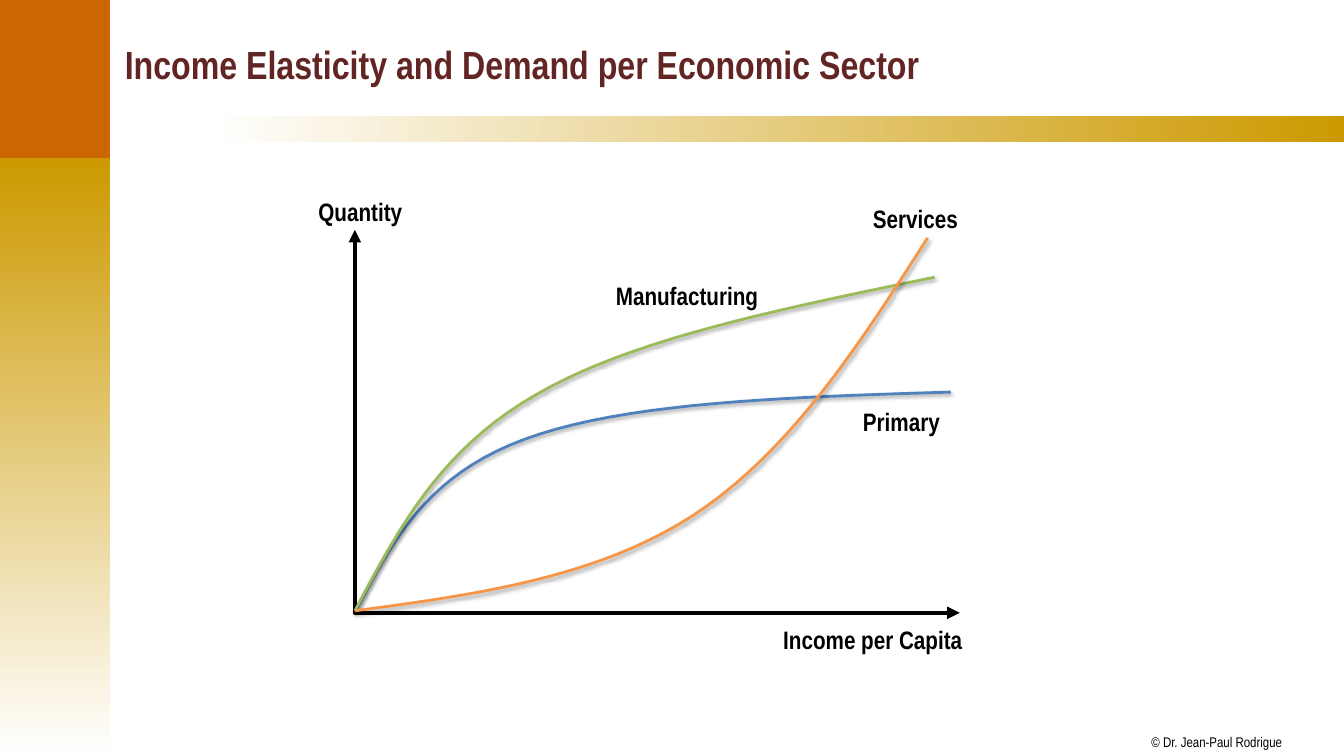
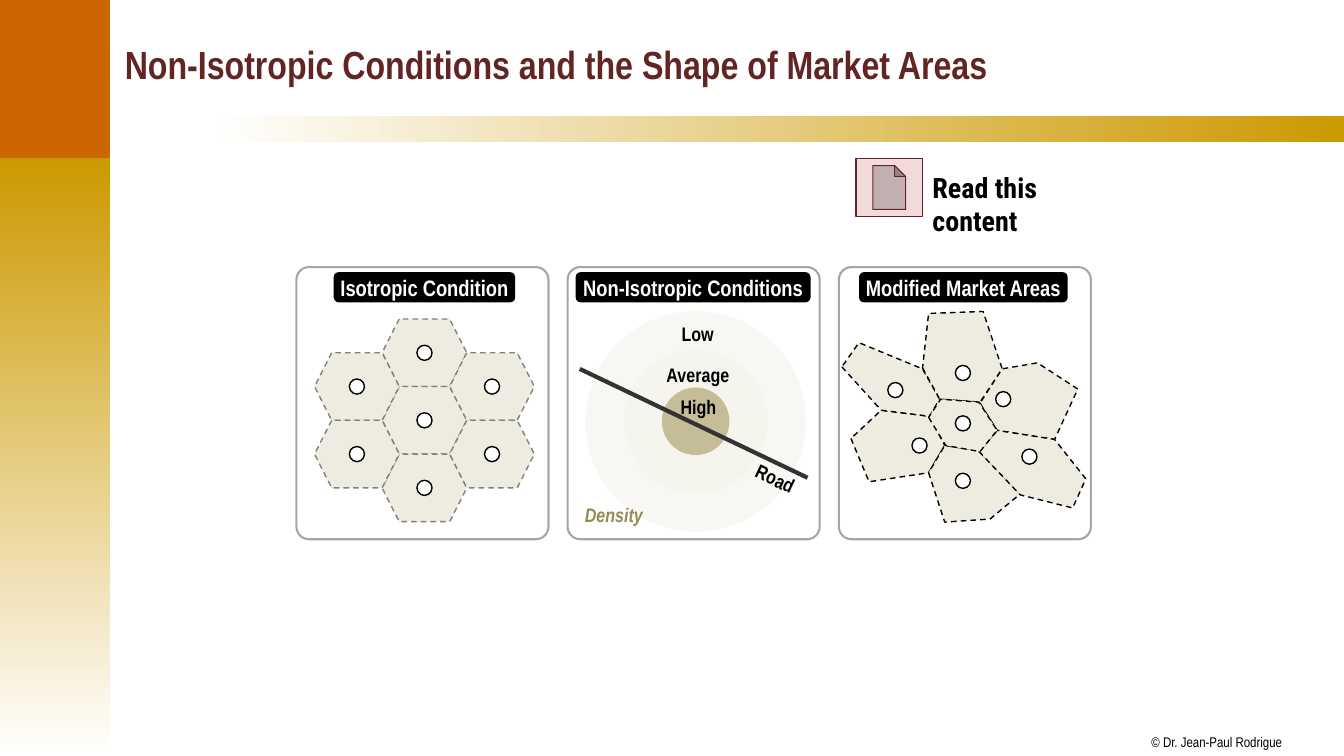
"""Build two economic geography slides: income elasticity and market areas."""
from dataclasses import dataclass
from typing import Optional

from lxml.etree import SubElement
from pptx import Presentation
from pptx.dml.color import RGBColor
from pptx.enum.dml import MSO_LINE_DASH_STYLE as Dash
from pptx.enum.shapes import MSO_CONNECTOR as Connector, MSO_SHAPE as Preset
from pptx.enum.text import MSO_ANCHOR as Anchor, PP_ALIGN as Align
from pptx.oxml.ns import qn
from pptx.util import Inches, Pt

Point = tuple[float, float]

BLACK = RGBColor(0x00, 0x00, 0x00)
WHITE = RGBColor(0xFF, 0xFF, 0xFF)
GOLD = RGBColor(0xCC, 0x99, 0x00)
ORANGE = RGBColor(0xCC, 0x66, 0x00)
MAROON = RGBColor(0x63, 0x25, 0x23)
PINK = RGBColor(0xF2, 0xDC, 0xDB)
BLUE = RGBColor(0x4F, 0x81, 0xBD)
GREEN = RGBColor(0x9B, 0xBB, 0x59)
APRICOT = RGBColor(0xF7, 0x96, 0x46)
CREAM = RGBColor(0xEE, 0xEC, 0xE1)
OLIVE = RGBColor(0x94, 0x8A, 0x54)
CHARCOAL = RGBColor(0x33, 0x33, 0x33)
GREY = RGBColor(0x80, 0x80, 0x80)
SILVER = RGBColor(0xA6, 0xA6, 0xA6)
LOW_TINT = RGBColor(0xF8, 0xF7, 0xF3)
AVERAGE_TINT = RGBColor(0xF5, 0xF4, 0xED)
HIGH_TINT = RGBColor(0xC4, 0xBD, 0x97)

NARROW = "Arial Narrow"
DOT_SIZE = 0.15
HEX_PITCH = 0.67
HEX_CENTRE = (4.21, 4.17)
DENSITY_CENTRE = (6.9, 4.18)
PANEL_LEFT, PANEL_STEP = 2.94, 2.69
CURVE_STEPS = 20


@dataclass(frozen=True)
class Label:
    """Text with its place and format."""
    text: str
    left: float
    top: float
    width: float
    height: float = 0.4
    size: float = 18
    color: RGBColor = BLACK
    font: str = NARROW
    bold: bool = True
    italic: bool = False
    inset: bool = True
    wrap: bool = False
    anchor: Anchor = Anchor.TOP
    rotation: float = 0


@dataclass(frozen=True)
class Curve:
    """Demand curve as a start and two cubic segments of three points each."""
    color: RGBColor
    points: tuple[Point, ...]


@dataclass(frozen=True)
class Panel:
    """Heading pill of one framed panel."""
    heading: str
    left: float
    width: float


CURVES = (
    Curve(BLUE, ((3.53, 6.06), (3.88, 5.39), (4.22, 4.72), (5.2, 4.36),
                 (6.19, 3.99), (7.81, 3.94), (9.43, 3.89))),
    Curve(GREEN, ((3.52, 6.06), (3.94, 5.27), (4.35, 4.47), (5.31, 3.92),
                  (6.26, 3.36), (7.77, 3.06), (9.27, 2.75))),
    Curve(APRICOT, ((3.52, 6.06), (4.73, 5.9), (5.93, 5.73), (6.88, 5.11),
                    (7.83, 4.49), (8.52, 3.43), (9.2, 2.36))),
)
CHART_LABELS = (
    Label("Quantity", 3.06, 1.9, 1.04),
    Label("Income per Capita", 7.67, 6.14, 2),
    Label("Primary", 8.46, 3.98, 0.98),
    Label("Manufacturing", 6.01, 2.73, 1.63),
    Label("Services", 8.56, 1.97, 1.06),
)
MARKET_AREAS = (
    ((8.44, 4.35), (8.62, 4.78), (9.21, 4.69), (9.37, 4.42), (9.22, 4.13), (8.74, 4.07)),
    ((9.21, 4.69), (9.37, 5.18), (9.82, 5.15), (10.12, 4.9), (9.71, 4.47), (9.37, 4.42)),
    ((8.35, 3.64), (8.74, 4.07), (9.22, 4.13), (9.32, 3.96), (9.15, 3.66), (8.52, 3.4)),
    ((9.15, 3.65), (9.32, 3.96), (9.72, 3.99), (9.94, 3.66), (9.75, 3.09), (9.21, 3.11)),
    ((9.72, 4), (9.89, 4.27), (10.46, 4.36), (10.69, 3.86), (10.29, 3.6), (9.94, 3.66)),
    ((9.71, 4.48), (10.12, 4.91), (10.64, 5.04), (10.77, 4.75), (10.46, 4.36), (9.89, 4.27)),
    ((9.21, 4.14), (9.38, 4.42), (9.72, 4.48), (9.89, 4.27), (9.71, 3.99), (9.33, 3.96)),
)
MARKET_CENTRES = ((9.55, 3.7), (9.55, 4.2), (8.88, 3.87), (9.12, 4.42),
                  (9.55, 4.77), (10.21, 4.53), (9.95, 3.96))
DENSITY_RINGS = ((2.19, LOW_TINT), (1.42, AVERAGE_TINT), (0.67, HIGH_TINT))
DENSITY_LABELS = tuple(
    Label(text, left, top, width, 0.24, 14, color, italic=italic, inset=False, rotation=rotation)
    for text, left, top, width, color, italic, rotation in (
        ("Low", 6.76, 3.19, 0.32, BLACK, False, 0),
        ("Average", 6.61, 3.6, 0.63, BLACK, False, 0),
        ("High", 6.75, 3.92, 0.36, BLACK, False, 0),
        ("Road", 7.49, 4.63, 0.4, BLACK, False, 25.5),
        ("Density", 5.8, 4.99, 0.58, OLIVE, True, 0),
    )
)
PANELS = (
    Panel("Isotropic Condition", 3.31, 1.8),
    Panel("Non-Isotropic Conditions", 5.71, 2.33),
    Panel("Modified Market Areas", 8.52, 2.07),
)


def set_line(shape, color: Optional[RGBColor], width: float, dash: Optional[Dash] = None) -> None:
    """Give a shape its outline, or none."""
    if color is None:
        shape.line.fill.background()
        return
    shape.line.color.rgb = color
    shape.line.width = Pt(width)
    if dash is not None:
        shape.line.dash_style = dash


def set_look(shape, fill: Optional[RGBColor], line: Optional[RGBColor] = None,
             width: float = 1, dash: Optional[Dash] = None) -> None:
    """Set fill and outline and drop the theme shadow."""
    shape.shadow.inherit = False
    if fill is None:
        shape.fill.background()
    else:
        shape.fill.solid()
        shape.fill.fore_color.rgb = fill
    set_line(shape, line, width, dash)


def write_text(shape, label: Label, align: Align = Align.LEFT) -> None:
    """Write a label into a shape."""
    frame = shape.text_frame
    frame.word_wrap = label.wrap
    frame.vertical_anchor = label.anchor
    if not label.inset:
        for side in ("left", "top", "right", "bottom"):
            setattr(frame, f"margin_{side}", Inches(0))
    para = frame.paragraphs[0]
    para.alignment = align
    span = para.add_run()
    span.text = label.text
    formats = {"name": label.font, "size": Pt(label.size),
               "bold": label.bold, "italic": label.italic}
    for name, value in formats.items():
        setattr(span.font, name, value)
    span.font.color.rgb = label.color


def add_label(page, label: Label) -> None:
    """Draw a text box."""
    box = page.shapes.add_textbox(Inches(label.left), Inches(label.top),
                                  Inches(label.width), Inches(label.height))
    box.rotation = label.rotation
    write_text(box, label)


def add_preset(page, preset: Preset, left: float, top: float, width: float, height: float,
               fill: Optional[RGBColor], line: Optional[RGBColor] = None, line_width: float = 1):
    """Draw a preset shape."""
    shape = page.shapes.add_shape(preset, Inches(left), Inches(top), Inches(width), Inches(height))
    set_look(shape, fill, line, line_width)
    return shape


def add_disc(page, centre: Point, size: float, fill: RGBColor,
             line: Optional[RGBColor] = None) -> None:
    """Draw a circle around a centre."""
    add_preset(page, Preset.OVAL, centre[0] - size / 2, centre[1] - size / 2, size, size, fill, line)


def add_outline(page, points: list[Point], closed: bool):
    """Draw a freeform through points."""
    corners = [(Inches(x), Inches(y)) for x, y in points]
    builder = page.shapes.build_freeform(*corners[0])
    builder.add_line_segments(corners[1:], close=closed)
    return builder.convert_to_shape()


def add_area(page, points: list[Point], line: RGBColor) -> None:
    """Draw a market area with a dashed border."""
    set_look(add_outline(page, points, True), CREAM, line, 1, Dash.DASH)


def add_gradient(page, left: float, top: float, width: float, height: float,
                 colors: tuple[RGBColor, RGBColor], angle: float) -> None:
    """Draw a band that fades between two colours."""
    band = add_preset(page, Preset.RECTANGLE, left, top, width, height, None)
    band.fill.gradient()
    band.fill.gradient_angle = angle
    for stop, color in zip(band.fill.gradient_stops, colors):
        stop.color.rgb = color


def add_page(deck, title: str):
    """Add a slide with the shared bands, footer and title."""
    page = deck.slides.add_slide(deck.slide_layouts[6])
    add_gradient(page, -0.02, 1.57, 1.11, 5.93, (GOLD, WHITE), 270)
    add_gradient(page, 2.09, 1.15, 11.25, 0.26, (WHITE, GOLD), 0)
    add_label(page, Label("© Dr. Jean-Paul Rodrigue", 11.42, 7.28, 1.31, 0.17, 10,
                          bold=False, inset=False))
    add_preset(page, Preset.RECTANGLE, -0.02, -0.01, 1.11, 1.58, ORANGE)
    add_label(page, Label(title, 1.14, 0.11, 11.97, 1.04, 28, MAROON,
                          wrap=True, anchor=Anchor.MIDDLE))
    return page


def sample_curve(points: tuple[Point, ...]) -> list[Point]:
    """Return points along the joined cubic segments."""
    samples = [points[0]]
    for first in range(0, len(points) - 1, 3):
        segment = points[first:first + 4]
        for step in range(1, CURVE_STEPS + 1):
            t = step / CURVE_STEPS
            weights = ((1 - t) ** 3, 3 * t * (1 - t) ** 2, 3 * t * t * (1 - t), t ** 3)
            samples.append((sum(w * x for w, (x, _) in zip(weights, segment)),
                            sum(w * y for w, (_, y) in zip(weights, segment))))
    return samples


def add_curve(page, curve: Curve) -> None:
    """Draw a curve with a soft shadow."""
    shape = add_outline(page, sample_curve(curve.points), False)
    set_look(shape, None, curve.color, 2)
    effects = shape._element.spPr.find(qn("a:effectLst"))
    shadow = SubElement(effects, qn("a:outerShdw"), blurRad=str(Pt(3.1)), dist=str(Pt(1.6)),
                        dir="5400000", rotWithShape="0")
    color = SubElement(shadow, qn("a:srgbClr"), val=str(BLACK))
    SubElement(color, qn("a:alpha"), val="38000")


def build_elasticity(deck) -> None:
    """Build the slide on income elasticity."""
    page = add_page(deck, "Income Elasticity and Demand per Economic Sector")
    axes = add_outline(page, [(3.52, 2.28), (3.52, 6.08), (9.52, 6.08)], False)
    set_look(axes, None, BLACK, 3)
    for end in ("a:headEnd", "a:tailEnd"):
        SubElement(axes._element.spPr.find(qn("a:ln")), qn(end), type="triangle")
    for curve in CURVES:
        add_curve(page, curve)
    for label in CHART_LABELS:
        add_label(page, label)


def add_hexagons(page) -> None:
    """Draw the seven regular market areas with their centres."""
    half = HEX_PITCH / 2
    corners = ((-0.25, -half), (-0.42, 0), (-0.25, half), (0.25, half), (0.42, 0), (0.25, -half))
    for column, rows in ((0, (-1, 0, 1)), (-1, (-0.5, 0.5)), (1, (-0.5, 0.5))):
        for row in rows:
            x, y = HEX_CENTRE[0] + column * HEX_PITCH, HEX_CENTRE[1] + row * HEX_PITCH
            add_area(page, [(x + dx, y + dy) for dx, dy in corners], GREY)
            add_disc(page, (x, y), DOT_SIZE, WHITE, BLACK)


def add_density(page) -> None:
    """Draw the density rings, the road and their labels."""
    for size, tint in DENSITY_RINGS:
        add_disc(page, DENSITY_CENTRE, size, tint)
    road = page.shapes.add_connector(Connector.STRAIGHT, Inches(8.01), Inches(4.74),
                                     Inches(5.75), Inches(3.66))
    set_line(road, CHARCOAL, 3)
    SubElement(road._element.spPr, qn("a:effectLst"))
    for label in DENSITY_LABELS:
        add_label(page, label)


def add_panel(page, index: int, panel: Panel) -> None:
    """Draw a panel frame and its heading."""
    frame = add_preset(page, Preset.ROUNDED_RECTANGLE, PANEL_LEFT + index * PANEL_STEP, 2.65,
                       2.5, 2.7, None, SILVER, 1.5)
    frame.adjustments[0] = 0.05
    label = Label(panel.heading, panel.left, 2.7, panel.width, 0.3, 16, WHITE,
                  inset=False, anchor=Anchor.MIDDLE)
    pill = add_preset(page, Preset.ROUNDED_RECTANGLE, label.left, label.top,
                      label.width, label.height, BLACK)
    write_text(pill, label, Align.CENTER)


def build_market_areas(deck) -> None:
    """Build the slide on market areas."""
    page = add_page(deck, "Non-Isotropic Conditions and the Shape of Market Areas")
    add_preset(page, Preset.ACTION_BUTTON_DOCUMENT, 8.49, 1.57, 0.66, 0.58, PINK, MAROON, 0.75)
    add_label(page, Label("Read this content", 9.15, 1.64, 1.86, 0.44, 20,
                          font="Roboto Condensed", wrap=True))
    for area in MARKET_AREAS:
        add_area(page, area, BLACK)
    for centre in MARKET_CENTRES:
        add_disc(page, centre, DOT_SIZE, WHITE, BLACK)
    add_hexagons(page)
    add_density(page)
    for index, panel in enumerate(PANELS):
        add_panel(page, index, panel)


def main() -> None:
    """Build and save the deck."""
    deck = Presentation()
    deck.slide_width, deck.slide_height = Inches(13.33), Inches(7.5)
    build_elasticity(deck)
    build_market_areas(deck)
    deck.save("out.pptx")


if __name__ == "__main__":
    main()
